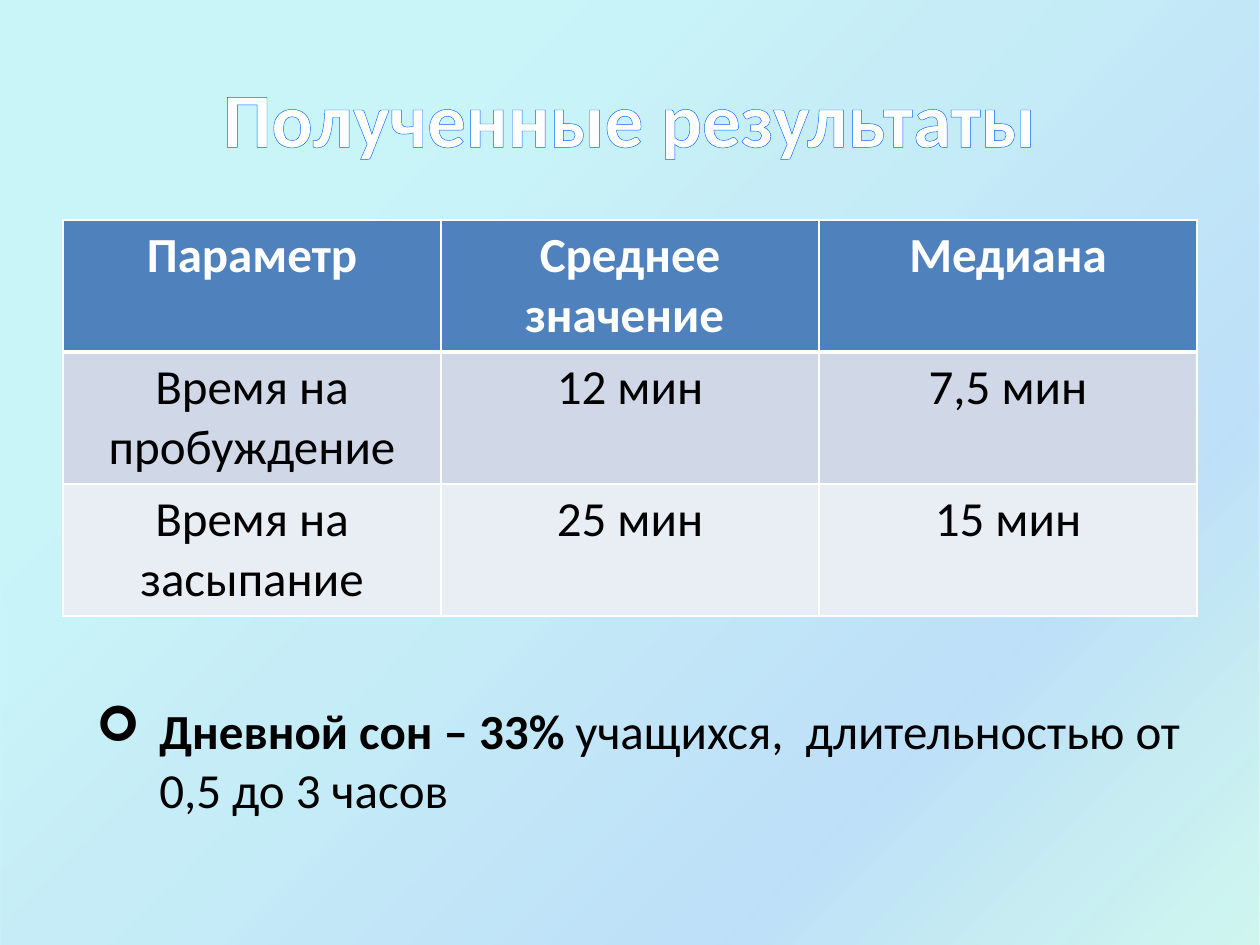
from lxml.etree import SubElement
from pptx import Presentation
from pptx.dml.color import RGBColor
from pptx.enum.shapes import MSO_SHAPE
from pptx.enum.text import MSO_ANCHOR, PP_ALIGN
from pptx.oxml.ns import qn
from pptx.util import Emu, Pt

FONT = "Calibri"
WHITE, BLACK, OUTLINE = "FFFFFF", "000000", "0066FF"
TITLE = "Полученные результаты"
ROWS = [
    ("Параметр", "Среднее значение ", "Медиана"),
    ("Время на пробуждение", "12 мин", "7,5 мин"),
    ("Время на засыпание", "25 мин", "15 мин"),
]
ROW_FILLS = ["4F81BD", "D0D8E8", "E9EDF4"]
NOTE = [("Дневной сон – 33% ", True), ("учащихся,  длительностью от 0,5 до 3 часов", False)]
GRADIENT = [(25, "21D6E0", 23), (75, "0087E6", 25), (100, "03D4A8", 18), (100, "005CBF", 26)]
COLUMN_WIDTH, ROW_HEIGHT = 378, 132


def px(length):
    return Emu(round(length * 914400 / 126))


def color(value):
    return RGBColor.from_string(value)


def style(span, size, ink, bold):
    span.font.name, span.font.size, span.font.bold = FONT, Pt(size), bold
    span.font.color.rgb = color(ink)


def add_line(parent, tag, index, ink, points):
    line = SubElement(parent, qn(tag), w=str(int(Pt(points))))
    SubElement(SubElement(line, qn("a:solidFill")), qn("a:srgbClr"), val=ink)
    parent.insert(index, line)


def add_background(page):
    panel = page.shapes.add_shape(MSO_SHAPE.RECTANGLE, 0, 0, px(1260), px(966))
    panel.shadow.inherit = False
    panel.line.fill.background()
    panel.fill.gradient()
    panel.fill.gradient_angle = 315
    stops = next(panel._element.iter(qn("a:gsLst")))
    for stop in list(stops):
        stops.remove(stop)
    for position, ink, opacity in GRADIENT:
        stop = SubElement(stops, qn("a:gs"), pos=str(position * 1000))
        tint = SubElement(stop, qn("a:srgbClr"), val=ink)
        SubElement(tint, qn("a:alpha"), val=str(opacity * 1000))


def add_text(page, left, top, width, height):
    box = page.shapes.add_textbox(px(left), px(top), px(width), px(height))
    box.text_frame.word_wrap = True
    return box.text_frame


def add_title(page):
    frame = add_text(page, 63, 38, 1134, 157)
    frame.vertical_anchor = MSO_ANCHOR.MIDDLE
    frame.text = TITLE
    para = frame.paragraphs[0]
    para.alignment = PP_ALIGN.CENTER
    span = para.runs[0]
    style(span, 44, WHITE, True)
    add_line(span.font._element, "a:ln", 0, OUTLINE, 1.45)


def add_results(page):
    columns = len(ROWS[0])
    table = page.shapes.add_table(
        len(ROWS), columns, px(63), px(220), px(COLUMN_WIDTH * columns), px(ROW_HEIGHT * len(ROWS))
    ).table
    for row, (texts, fill) in enumerate(zip(ROWS, ROW_FILLS)):
        header = row == 0
        for column, text in enumerate(texts):
            cell = table.cell(row, column)
            cell.fill.solid()
            cell.fill.fore_color.rgb = color(fill)
            cell.text = text
            para = cell.text_frame.paragraphs[0]
            para.alignment = PP_ALIGN.CENTER
            style(para.runs[0], 28, WHITE if header else BLACK, header)
            weights = {"L": 1, "R": 1, "T": 3 if row == 1 else 1, "B": 3 if header else 1}
            for index, (side, points) in enumerate(weights.items()):
                add_line(cell._tc.get_or_add_tcPr(), f"a:ln{side}", index, WHITE, points)


def add_note(page):
    para = add_text(page, 84, 694, 1121, 131).paragraphs[0]
    properties = para._p.get_or_add_pPr()
    properties.set("marL", str(px(63)))
    properties.set("indent", str(-px(63)))
    SubElement(properties, qn("a:buFont"), typeface="Wingdings")
    SubElement(properties, qn("a:buChar"), char="➢")
    for text, bold in NOTE:
        span = para.add_run()
        span.text = text
        style(span, 28, BLACK, bold)


def main():
    """Build the slide with the sleep survey results."""
    deck = Presentation()
    deck.slide_width, deck.slide_height = px(1260), px(945)
    page = deck.slides.add_slide(deck.slide_layouts[6])
    add_background(page)
    add_title(page)
    add_results(page)
    add_note(page)
    deck.save("out.pptx")


if __name__ == "__main__":
    main()
